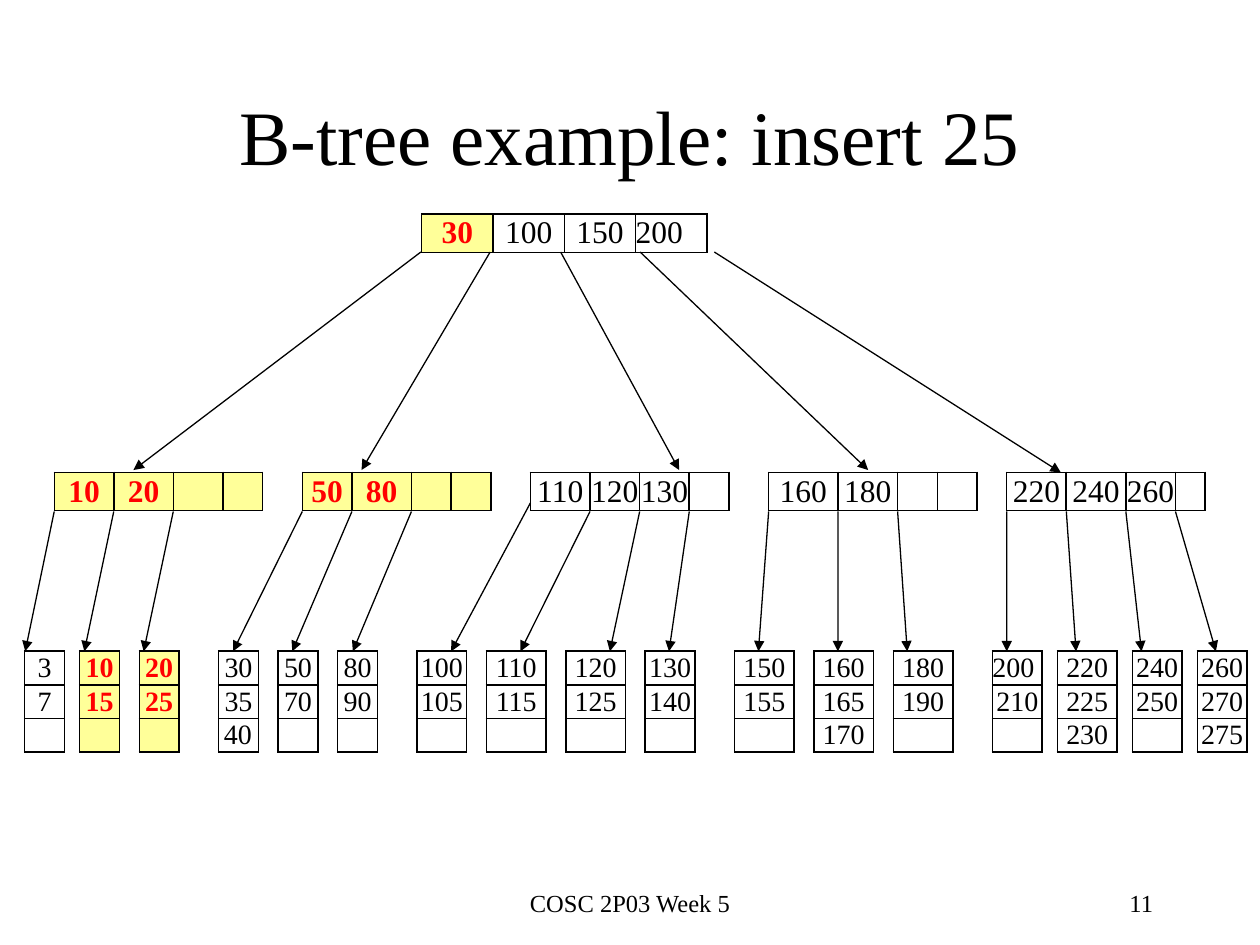
from itertools import accumulate

from lxml import etree
from pptx import Presentation
from pptx.dml.color import RGBColor
from pptx.enum.shapes import MSO_CONNECTOR
from pptx.enum.text import MSO_ANCHOR, PP_ALIGN
from pptx.oxml.ns import qn
from pptx.util import Pt

LEFT, CENTER, RIGHT = PP_ALIGN.LEFT, PP_ALIGN.CENTER, PP_ALIGN.RIGHT
TOP, MIDDLE = MSO_ANCHOR.TOP, MSO_ANCHOR.MIDDLE
STRAIGHT = MSO_CONNECTOR.STRAIGHT

FONT = "Times New Roman"
BLACK, RED, YELLOW = "000000", "FF0000", "FFFF99"
NO_TABLE_STYLE = "{2D5ABB26-0587-4C30-8999-92F81FD0307C}"
UNIT = 5.67  # column widths are whole or half multiples of this
LEFT_ALIGNED_KEYS = {"200", "40"}

ROOT_BOX = (241, 122.4, 21.8)  # left, top, row height
NODE_BOX = (31, 269.9, 21.8)
LEAF_BOX = (14.1, 372.1, 17.9)

ROOT_KEYS = ["30", "100", "150", "200"]
ROOT_POINTERS = [(240.5, 76.3), (280.1, 206.6), (320.4, 388.1),
                 (365.8, 496.1), (408.2, 606.2)]  # start x, end x

# gap before, column widths, keys, highlighted, end x of each child pointer
NODES = [
    (0, [6, 6, 5, 4], ["10", "20"], True, [14.4, 48.2, 82.1]),
    (4, [5, 6, 4, 4], ["50", "80"], True, [133.2, 167, 201.6]),
    (4, [6, 5, 5, 4], ["110", "120", "130"], False, [257.8, 297.4, 348.5, 382.3]),
    (4, [7, 6, 4, 4], ["160", "180"], False, [433.4, 478.8, 518.4]),
    (3, [6, 6, 5, 3], ["220", "240", "260"], False, [575.3, 614.9, 652.3, 694.8]),
]

# gap before, width, keys, highlighted
LEAVES = [
    (0, 4, ["3", "7"], False),
    (1.5, 4, ["10", "15"], True),
    (2, 4, ["20", "25"], True),
    (4, 4, ["30", "35", "40"], False),
    (2, 4, ["50", "70"], False),
    (2, 4, ["80", "90"], False),
    (4, 5, ["100", "105"], False),
    (2, 6, ["110", "115"], False),
    (2, 6, ["120", "125"], False),
    (2, 5, ["130", "140"], False),
    (4, 6, ["150", "155"], False),
    (2, 6, ["160", "165", "170"], False),
    (2, 6, ["180", "190"], False),
    (4, 5, ["200", "210"], False),
    (1, 6, ["220", "225", "230"], False),
    (1, 5, ["240", "250"], False),
    (1, 5, ["260", "270", "275"], False),
]


def color(hex_string):
    return RGBColor.from_string(hex_string)


def set_values(target, values):
    for name, value in values.items():
        setattr(target, name, value)


def write(paragraph, text, size, alignment, hex_color=BLACK, bold=False):
    paragraph.alignment = alignment
    run = paragraph.add_run()
    run.text = text
    set_values(run.font, {"name": FONT, "size": Pt(size), "bold": bold})
    run.font.color.rgb = color(hex_color)


def add_text(slide, box, text, size, alignment, anchor=TOP):
    shape = slide.shapes.add_textbox(*map(Pt, box))
    set_values(shape.text_frame, {"word_wrap": True, "vertical_anchor": anchor})
    write(shape.text_frame.paragraphs[0], text, size, alignment)


def add_pointer(slide, start, end):
    connector = slide.shapes.add_connector(STRAIGHT, *map(Pt, (*start, *end)))
    connector.line.color.rgb = color(BLACK)
    connector.line.width = Pt(0.75)
    properties = connector._element.spPr
    etree.SubElement(properties.find(qn("a:ln")), qn("a:tailEnd"), type="triangle")
    etree.SubElement(properties, qn("a:effectLst"))


def add_borders(cell, sides):
    properties = cell._tc.get_or_add_tcPr()
    for side in sides:
        line = etree.SubElement(properties, qn(f"a:ln{side}"), w=str(Pt(1)))
        fill = etree.SubElement(line, qn("a:solidFill"))
        etree.SubElement(fill, qn("a:srgbClr"), val=BLACK)


def fill_cell(cell, key, size, highlighted, is_gap):
    margin = 0 if len(key) == 3 else Pt(3)
    set_values(cell, {"margin_left": margin, "margin_right": margin, "margin_top": 0,
                      "margin_bottom": 0, "vertical_anchor": MIDDLE})
    add_borders(cell, "LR" if is_gap else "LRTB")
    if highlighted:
        cell.fill.solid()
        cell.fill.fore_color.rgb = color(YELLOW)
    else:
        cell.fill.background()
    paragraph = cell.text_frame.paragraphs[0]
    if key:
        write(paragraph, key, size, LEFT if key in LEFT_ALIGNED_KEYS else CENTER,
              RED if highlighted else BLACK, highlighted)
    else:
        etree.SubElement(paragraph._p, qn("a:endParaRPr"), sz="800")


def add_level(slide, box, columns, row_count, size):
    """Draw one tree level; each column is (width, keys, highlighted), keys None for a gap."""
    left, top, row_height = box
    widths = [width for width, _, _ in columns]
    table = slide.shapes.add_table(
        row_count, len(columns), Pt(left), Pt(top),
        Pt(sum(widths)), Pt(row_count * row_height)).table
    set_values(table, {"first_row": False, "horz_banding": False})
    table._tbl.tblPr.find(qn("a:tableStyleId")).text = NO_TABLE_STYLE
    for row in table.rows:
        row.height = Pt(row_height)
    for column_index, (width, keys, highlighted) in enumerate(columns):
        table.columns[column_index].width = Pt(width)
        padded = (keys or []) + [""] * row_count
        for row_index in range(row_count):
            fill_cell(table.cell(row_index, column_index), padded[row_index],
                      size, highlighted, keys is None)


def add_root(slide, box):
    add_level(slide, box, [(40.75, [key], key == "30") for key in ROOT_KEYS], 1, 18)
    for index, (start, end) in enumerate(ROOT_POINTERS):
        last = index == len(ROOT_POINTERS) - 1
        add_pointer(slide, (start, 144), (end, 270 if last else 268.6))


def add_nodes(slide, box):
    columns = []
    left = box[0]
    for gap, widths, keys, highlighted, targets in NODES:
        if gap:
            columns.append((gap * UNIT, None, False))
        left += gap * UNIT
        padded = keys + [""] * (len(widths) - len(keys))
        columns += [(width * UNIT, [key], highlighted)
                    for width, key in zip(widths, padded)]
        edges = list(accumulate([width * UNIT for width in widths], initial=left))
        for edge, target in zip(edges, targets):
            from_side = keys[0] == "110" and edge == left
            add_pointer(slide, (edge, 287.3 if from_side else 292.3), (target, 372.2))
        left = edges[-1]
    add_level(slide, box, columns, 1, 18)


def add_leaves(slide, box):
    columns = []
    for gap, width, keys, highlighted in LEAVES:
        if gap:
            columns.append((gap * UNIT, None, False))
        columns.append((width * UNIT, keys, highlighted))
    add_level(slide, box, columns, 3, 16)


def main():
    presentation = Presentation()
    presentation.slide_width, presentation.slide_height = Pt(720), Pt(540)
    slide = presentation.slides.add_slide(presentation.slide_layouts[6])
    add_text(slide, (54, 31.7, 612, 90), "B-tree example: insert 25", 44, CENTER, MIDDLE)
    add_root(slide, ROOT_BOX)
    add_nodes(slide, NODE_BOX)
    add_leaves(slide, LEAF_BOX)
    add_text(slide, (246, 504, 228, 36), "COSC 2P03 Week 5", 14, CENTER)
    add_text(slide, (516, 504, 150, 36), "11", 14, RIGHT)
    presentation.save("out.pptx")


if __name__ == "__main__":
    main()
